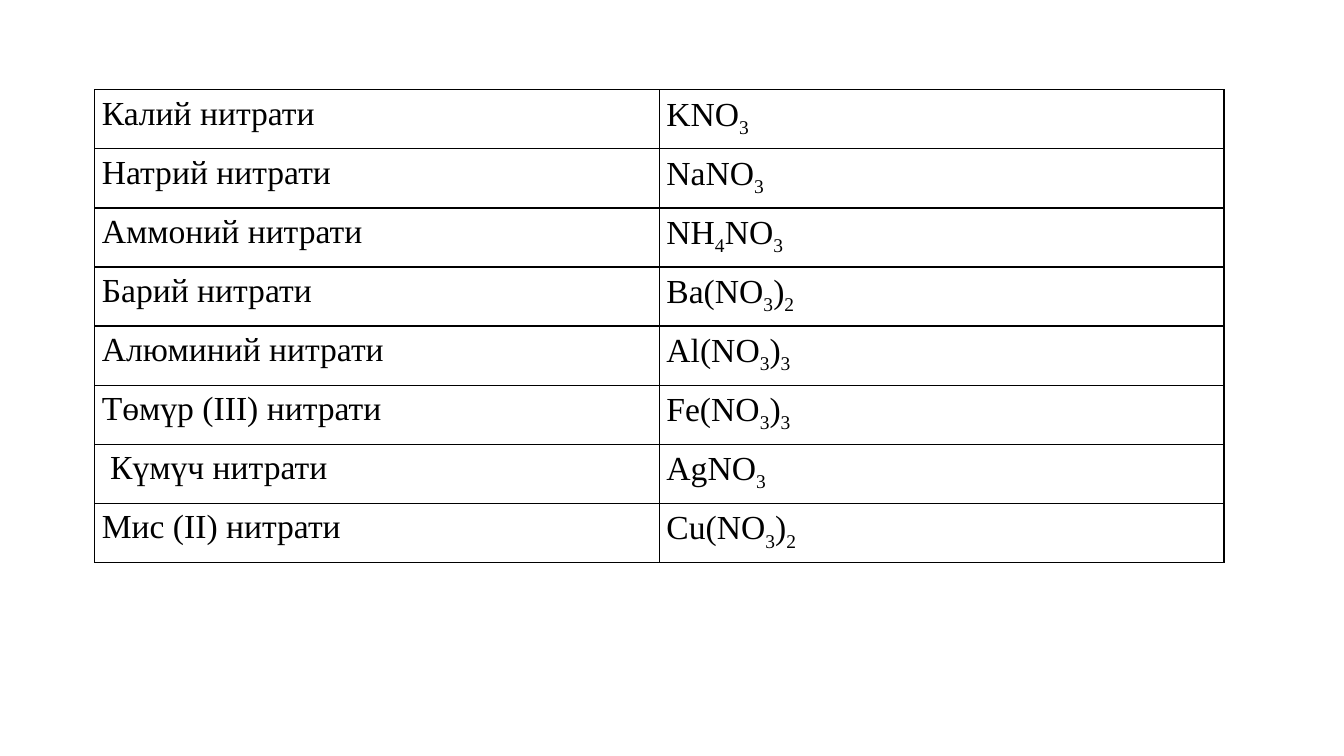
from dataclasses import dataclass
from itertools import groupby

from lxml import etree
from pptx import Presentation
from pptx import util as u
from pptx.dml.color import RGBColor
from pptx.enum import text
from pptx.oxml import ns
from pptx.table import Table, _Cell

FONT = "Times New Roman"
BLACK = "000000"


@dataclass(frozen=True)
class Nitrate:
    name: str
    formula: str


NITRATES = [
    Nitrate("Калий нитрати", "KNO3"),
    Nitrate("Натрий нитрати", "NaNO3"),
    Nitrate("Аммоний нитрати", "NH4NO3"),
    Nitrate("Барий нитрати", "Ba(NO3)2"),
    Nitrate("Алюминий нитрати", "Al(NO3)3"),
    Nitrate("Төмүр (III) нитрати", "Fe(NO3)3"),
    Nitrate(" Күмүч нитрати", "AgNO3"),
    Nitrate("Мис (II) нитрати", "Cu(NO3)2"),
]


def color(value: str) -> RGBColor:
    return RGBColor.from_string(value)


def write_text(cell: _Cell, content: str, *, size: float = 24, font: str = FONT,
               ink: str = BLACK, spacing: float = 1.15) -> None:
    """Write one paragraph, setting every digit as a subscript."""
    para = cell.text_frame.paragraphs[0]
    para.alignment = text.PP_ALIGN.JUSTIFY
    para.line_spacing = spacing
    for is_digit, letters in groupby(content, str.isdigit):
        span = para.add_run()
        span.text = "".join(letters)
        span.font.size = u.Pt(size)
        span.font.name = font
        span.font.color.rgb = color(ink)
        if is_digit:
            span.font._element.set("baseline", "-25000")


def add_borders(cell: _Cell, *, ink: str = BLACK, width: float = 1) -> None:
    properties = cell._tc.get_or_add_tcPr()
    for side in ("lnL", "lnR", "lnT", "lnB"):
        line = etree.SubElement(properties, ns.qn(f"a:{side}"), w=str(u.Pt(width)))
        fill = etree.SubElement(line, ns.qn("a:solidFill"))
        etree.SubElement(fill, ns.qn("a:srgbClr"), val=ink)


def fill_cell(cell: _Cell, content: str) -> None:
    cell.margin_left = cell.margin_right = u.Inches(0.07)
    cell.margin_top = cell.margin_bottom = 0
    add_borders(cell)
    cell.fill.background()
    write_text(cell, content)


def fill_table(table: Table, nitrates: list[Nitrate]) -> None:
    table.first_row = table.horz_banding = False
    for row, nitrate in enumerate(nitrates):
        fill_cell(table.cell(row, 0), nitrate.name)
        fill_cell(table.cell(row, 1), nitrate.formula)


def main() -> None:
    deck = Presentation()
    deck.slide_width, deck.slide_height = u.Inches(13.33), u.Inches(7.5)
    page = deck.slides.add_slide(deck.slide_layouts[6])

    # Nitrate names and formulas
    frame = page.shapes.add_table(len(NITRATES), 2, u.Inches(0.94), u.Inches(0.89),
                                  u.Inches(11.2), u.Inches(4.69))
    fill_table(frame.table, NITRATES)

    deck.save("out.pptx")


if __name__ == "__main__":
    main()
